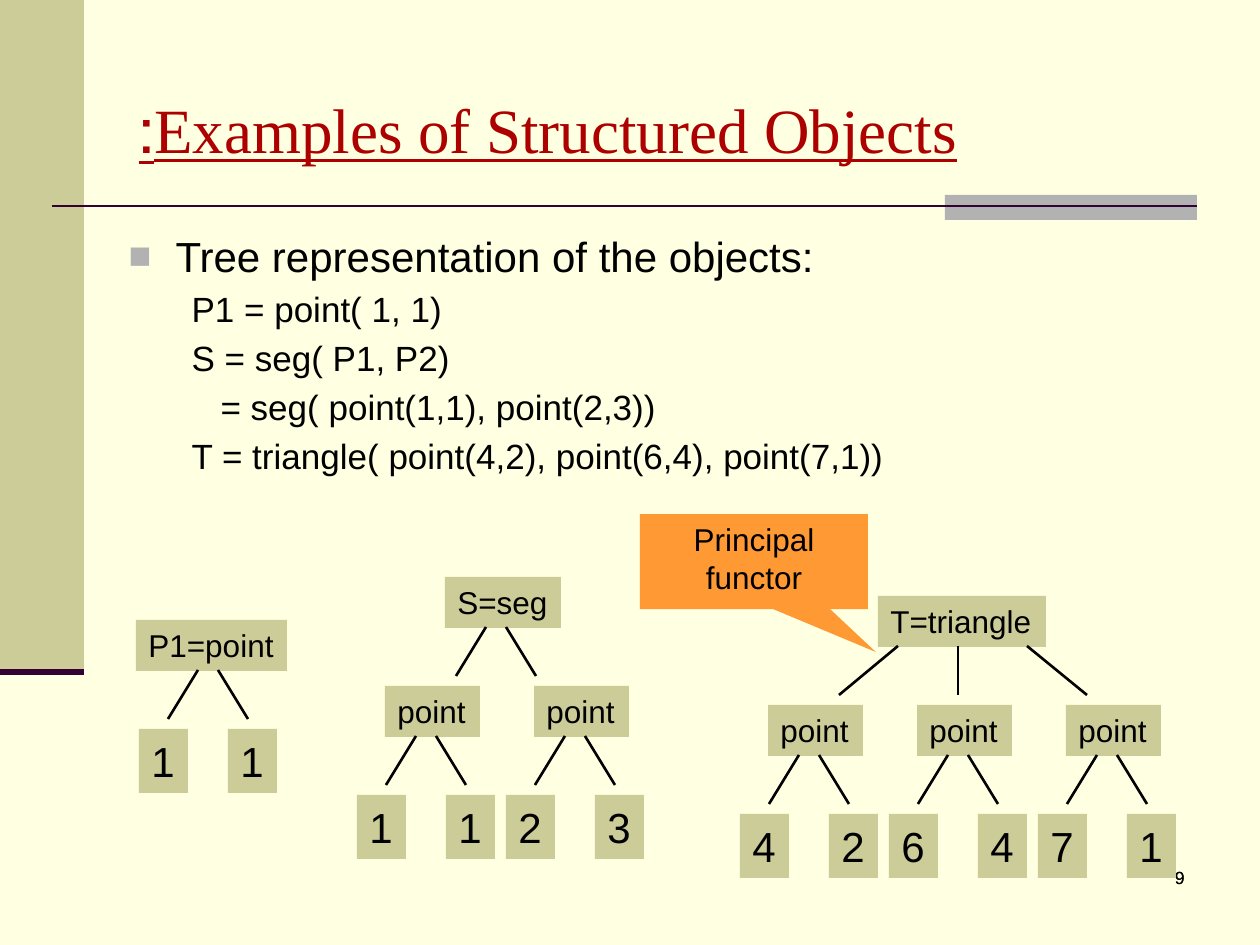
from dataclasses import dataclass

from lxml.etree import SubElement
from pptx import Presentation
from pptx.dml.color import RGBColor
from pptx.enum.shapes import MSO_CONNECTOR, MSO_SHAPE
from pptx.enum.text import MSO_ANCHOR, MSO_AUTO_SIZE, PP_ALIGN
from pptx.oxml.ns import qn
from pptx.util import Emu, Pt

SCALE = 914400 / 126
NODE_HEIGHT = 51
LEVEL_STEP = 109
CHILD_STEP = 149


@dataclass(frozen=True)
class Theme:
    """Colours, fonts and type sizes of the slide."""

    page: str = "FFFFE1"
    olive: str = "CCCC99"
    grey: str = "B2B2B2"
    plum: str = "330033"
    orange: str = "FF9933"
    red: str = "AD0000"
    ink: str = "000000"
    sans: str = "Arial"
    serif: str = "Times New Roman"
    title: int = 36
    lead: int = 24
    detail: int = 20
    node: int = 18
    number: int = 10


THEME = Theme()


def px(length):
    """Turn whole pixels into EMU."""
    return Emu(round(length * SCALE))


def colour(value):
    """Return a colour object for a hex value."""
    return RGBColor.from_string(value)


def apply(target, formats):
    """Set every attribute named in a dict of format values."""
    for name, value in formats.items():
        setattr(target, name, value)


def place(shape, left, top, width, height):
    """Move and size a shape."""
    apply(shape, {"left": px(left), "top": px(top), "width": px(width), "height": px(height)})


def write(para, text, size, font=THEME.sans, ink=THEME.ink, underline=None):
    """Add one formatted span to a paragraph."""
    span = para.add_run()
    span.text = text
    apply(span.font, {"size": Pt(size), "name": font, "underline": underline})
    span.font.color.rgb = colour(ink)


def add_box(shapes, kind, bounds, fill):
    """Add a filled shape without line or shadow."""
    box = shapes.add_shape(kind, *map(px, bounds))
    box.fill.solid()
    box.fill.fore_color.rgb = colour(fill)
    box.line.fill.background()
    box.shadow.inherit = False
    return box


def add_line(shapes, start, end, ink=THEME.ink, weight=1.5):
    """Add a straight line without shadow."""
    line = shapes.add_connector(MSO_CONNECTOR.STRAIGHT, *map(px, (*start, *end)))
    line.line.color.rgb = colour(ink)
    line.line.width = Pt(weight)
    SubElement(line._element.spPr, qn("a:effectLst"))


def add_label(shapes, text, bounds, size):
    """Add an olive box that fits its text."""
    box = add_box(shapes, MSO_SHAPE.RECTANGLE, bounds, THEME.olive)
    apply(box.text_frame, {"word_wrap": False, "auto_size": MSO_AUTO_SIZE.SHAPE_TO_FIT_TEXT,
                           "vertical_anchor": MSO_ANCHOR.TOP})
    para = box.text_frame.paragraphs[0]
    para.alignment = PP_ALIGN.LEFT
    write(para, text, size)


def add_branches(shapes, center, top, starts, ends):
    """Draw the lines that fan out below a node."""
    for start, end in zip(starts, ends):
        add_line(shapes, (center + start, top + 50), (center + end, top + 99))


def add_pair(shapes, label, center, top, leaves, offset=-41, width=95):
    """Draw a node with two leaves below it."""
    add_label(shapes, label, (center + offset, top, width, NODE_HEIGHT), THEME.node)
    for leaf, shift in zip(leaves, (-69, 20)):
        add_label(shapes, leaf, (center + shift, top + LEVEL_STEP, 49, 64), THEME.lead)
    add_branches(shapes, center, top, (-10, 10), (-40, 40))


def add_tree(shapes, label, bounds, first_center, pairs):
    """Draw a root with a row of point nodes below it."""
    add_label(shapes, label, bounds, THEME.node)
    for index, leaves in enumerate(pairs):
        add_pair(shapes, "point", first_center + index * CHILD_STEP,
                 bounds[1] + LEVEL_STEP, leaves)


def add_callout(shapes):
    """Draw the callout that names the principal functor."""
    callout = add_box(shapes, MSO_SHAPE.RECTANGULAR_CALLOUT, (640, 514, 228, 95), THEME.orange)
    callout.adjustments[0] = 0.535
    callout.adjustments[1] = 0.953
    apply(callout.text_frame, {"word_wrap": True, "vertical_anchor": MSO_ANCHOR.TOP})
    para = callout.text_frame.paragraphs[0]
    para.alignment = PP_ALIGN.CENTER
    write(para, "Principal functor", THEME.node)


def add_trees(page):
    """Draw the three object trees, each in its own group."""
    point, segment, triangle = (page.shapes.add_group_shape().shapes for _ in range(3))
    add_pair(point, "P1=point", 208, 620, "11", -72, 151)
    add_tree(segment, "S=seg", (445, 577, 116, NODE_HEIGHT), 426, ("11", "23"))
    add_branches(segment, 496, 577, (-10, 10), (-40, 40))
    add_tree(triangle, "T=triangle", (878, 596, 168, NODE_HEIGHT), 809, ("42", "64", "71"))
    add_branches(triangle, 958, 596, (-60, 0, 69), (-119, 0, 129))
    add_callout(triangle)


def add_frame(page):
    """Draw the side band, the rule and the page number."""
    add_box(page.shapes, MSO_SHAPE.RECTANGLE, (0, 0, 84, 672), THEME.olive)
    add_box(page.shapes, MSO_SHAPE.RECTANGLE, (945, 195, 252, 25), THEME.grey)
    add_line(page.shapes, (52, 206), (1197, 206), THEME.plum)
    add_line(page.shapes, (0, 672), (84, 672), THEME.plum, 3.5)
    for left in (935, 903):
        box = page.shapes.add_textbox(*map(px, (left, 861, 1197 - left, 63)))
        box.text_frame.word_wrap = True
        para = box.text_frame.paragraphs[0]
        para.alignment = PP_ALIGN.RIGHT
        write(para, "9", THEME.number)


def fill_title(title):
    """Write the right-to-left heading."""
    place(title, 126, 84, 853, 89)
    apply(title.text_frame, {"word_wrap": False, "vertical_anchor": MSO_ANCHOR.TOP,
                             "auto_size": MSO_AUTO_SIZE.SHAPE_TO_FIT_TEXT})
    para = title.text_frame.paragraphs[0]
    para.alignment = PP_ALIGN.LEFT
    para._p.get_or_add_pPr().set("rtl", "1")
    write(para, "Examples of Structured Objects:", THEME.title, THEME.serif, THEME.red, True)


def set_indent(para, margin, indent, bullet=None):
    """Set the indents of a paragraph and its bullet, if any."""
    properties = para._p.get_or_add_pPr()
    properties.set("marL", str(px(margin)))
    properties.set("indent", str(px(indent)))
    if bullet is None:
        SubElement(properties, qn("a:buNone"))
        return
    SubElement(SubElement(properties, qn("a:buClr")), qn("a:srgbClr"), val=THEME.grey)
    SubElement(properties, qn("a:buSzPct"), val="90000")
    SubElement(properties, qn("a:buFont"), typeface=THEME.sans)
    SubElement(properties, qn("a:buChar"), char=bullet)


def fill_body(body):
    """Write the lead line and the object definitions."""
    place(body, 116, 224, 1092, 645)
    body.text_frame.auto_size = MSO_AUTO_SIZE.NONE
    lead = body.text_frame.paragraphs[0]
    set_indent(lead, 47, -47, "■")
    write(lead, "Tree representation of the objects:", THEME.lead)
    for text, indent in (("P1 = point( 1, 1)", -39), ("S = seg( P1, P2)", -39),
                         ("= seg( point(1,1), point(2,3))", -10),
                         ("T = triangle( point(4,2), point(6,4), point(7,1))", -39)):
        para = body.text_frame.add_paragraph()
        para.level = 1
        set_indent(para, 102, indent)
        write(para, text, THEME.detail)


def main():
    """Build and save the slide."""
    deck = Presentation()
    apply(deck, {"slide_width": px(1260), "slide_height": px(945)})
    page = deck.slides.add_slide(deck.slide_layouts[1])
    page.background.fill.solid()
    page.background.fill.fore_color.rgb = colour(THEME.page)
    add_frame(page)
    fill_title(page.shapes.title)
    fill_body(page.placeholders[1])
    add_trees(page)
    deck.save("out.pptx")


if __name__ == "__main__":
    main()
